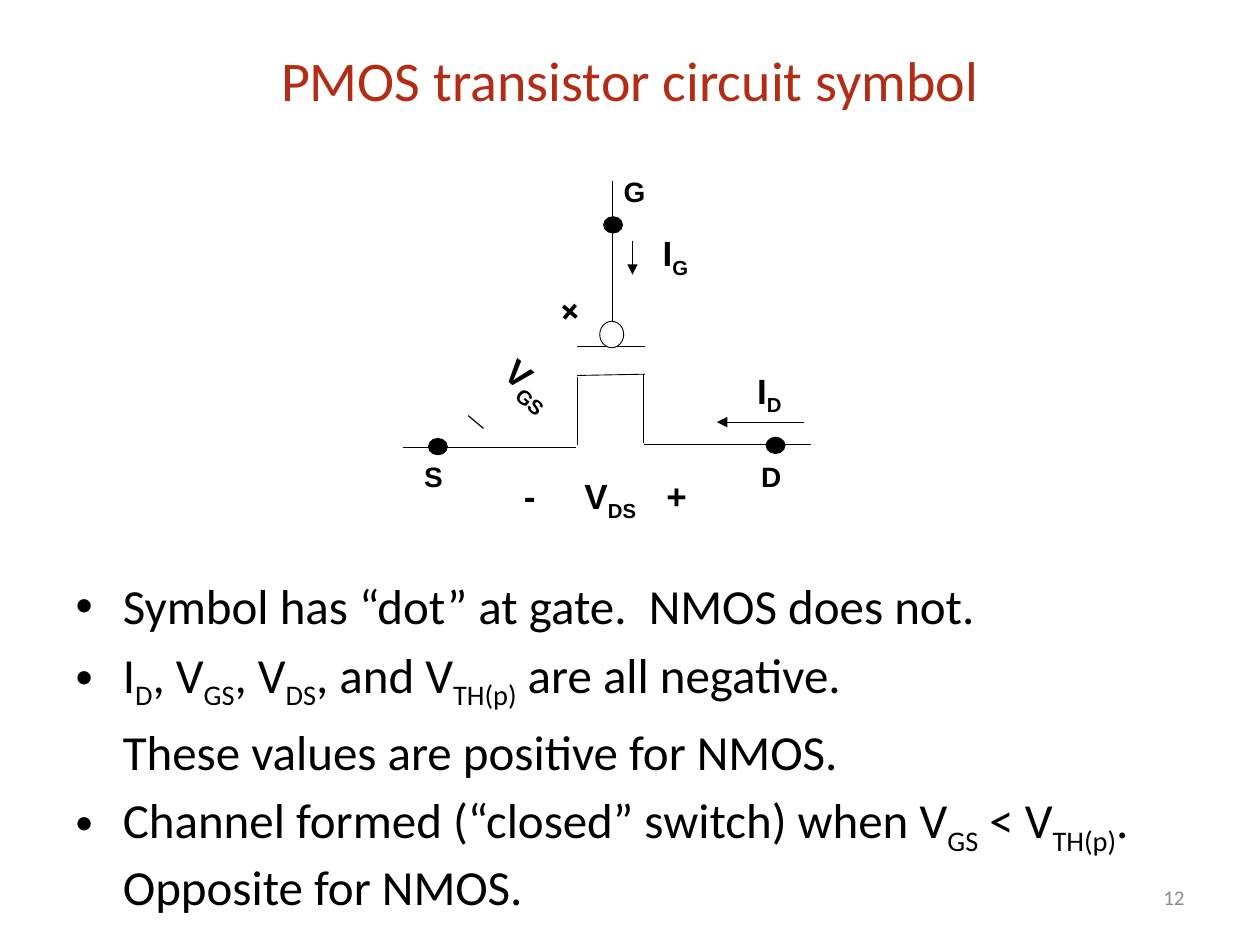
from lxml.etree import SubElement
from pptx import Presentation
from pptx.dml.color import RGBColor
from pptx.enum.shapes import MSO_CONNECTOR, MSO_SHAPE
from pptx.enum.text import MSO_ANCHOR, MSO_AUTO_SIZE, PP_ALIGN
from pptx.oxml.ns import qn
from pptx.util import Pt

EMU_PER_PX = 9144  # 100 px to the inch
BLACK, WHITE, RED, GRAY = "000000", "FFFFFF", "B32C16", "8C8C8C"


def px(length):
    return length * EMU_PER_PX


def color(hex_string):
    return RGBColor.from_string(hex_string)


def place(shape, left, top, width, height):
    shape.left, shape.top = px(left), px(top)
    shape.width, shape.height = px(width), px(height)


def write(paragraph, text, size, font="Calibri", fill=BLACK, bold=False):
    """Fill a paragraph; every second part between bars is a subscript."""
    for index, part in enumerate(text.split("|")):
        if not part:
            continue
        run = paragraph.add_run()
        run.text = part
        run.font.size, run.font.name, run.font.bold = Pt(size), font, bold
        run.font.color.rgb = color(fill)
        if index % 2:
            run.font._element.set("baseline", "-25000")


def add_wire(slide, start, end, arrow=False):
    wire = slide.shapes.add_connector(
        MSO_CONNECTOR.STRAIGHT, *(px(value) for value in start + end))
    wire.line.color.rgb = color(BLACK)
    wire.line.width = Pt(0.5)
    if arrow:
        SubElement(wire.line._get_or_add_ln(), qn("a:tailEnd"), type="triangle")
    SubElement(wire._element.spPr, qn("a:effectLst"))


def add_circle(slide, box, fill, rotation=0):
    circle = slide.shapes.add_shape(MSO_SHAPE.OVAL, *(px(value) for value in box))
    circle.shadow.inherit = False
    circle.rotation = rotation
    circle.fill.solid()
    circle.fill.fore_color.rgb = color(fill)
    circle.line.color.rgb = color(BLACK)
    circle.line.width = Pt(0.5)


def add_label(slide, box, lines, size=20, align=PP_ALIGN.LEFT, rotation=0, **style):
    label = slide.shapes.add_textbox(*(px(value) for value in box))
    label.rotation = rotation
    frame = label.text_frame
    frame.word_wrap = False
    for index, line in enumerate(lines):
        paragraph = frame.add_paragraph() if index else frame.paragraphs[0]
        paragraph.alignment = align
        write(paragraph, line, size, **style)
    return label


def add_symbol(slide):
    wires = [
        ((512, 275), (458, 275)), ((512, 297), (458, 298)),
        ((511, 297), (511, 352)), ((486, 275), (486, 144)),
        ((511, 353), (644, 353)), ((320, 355), (457, 355)),
        ((458, 299), (458, 353)),
    ]
    for start, end in wires:
        add_wire(slide, start, end)
    add_wire(slide, (638, 335), (569, 335), arrow=True)
    add_wire(slide, (502, 191), (502, 218), arrow=True)

    for left, top in ((480, 171), (341, 347), (609, 346)):
        add_circle(slide, (left, top, 13, 15), BLACK, rotation=90)
    add_circle(slide, (476, 255, 19, 21), WHITE)

    bold = {"font": "Arial", "bold": True}
    for text, box in (("G", (421, 134, 165, 37)), ("D", (570, 360, 84, 37)),
                      ("S", (302, 360, 84, 37))):
        add_label(slide, box, [text], 16, PP_ALIGN.CENTER, **bold)
    for text, left, top, width in (("I|D", 591, 288, 41), ("I|G", 516, 179, 42),
                                   ("-", 406, 372, 29), ("V|DS", 454, 372, 62),
                                   ("+", 519, 372, 36)):
        add_label(slide, (left, top, width, 43), [text], **bold)
    gate_source = add_label(slide, (400, 222, 65, 143), ["+", "V|GS", "_"],
                            rotation=40.2, **bold)
    gate_source.text_frame.paragraphs[1].space_before = Pt(23)


def fill_title(title):
    place(title, 50, 0, 900, 125)
    title.text_frame.vertical_anchor = MSO_ANCHOR.MIDDLE
    write(title.text_frame.paragraphs[0], "PMOS transistor circuit symbol", 32, fill=RED)


def fill_body(body):
    place(body, 50, 452, 892, 298)
    frame = body.text_frame
    frame.auto_size = MSO_AUTO_SIZE.NONE
    lines = [
        ("Symbol has “dot” at gate.  NMOS does not.", True),
        ("I|D|, V|GS|, V|DS|, and V|TH(p)| are all negative.", True),
        ("These values are positive for NMOS.", False),
        ("Channel formed (“closed” switch) when V|GS| < V|TH(p)|. Opposite for NMOS.", True),
    ]
    for index, (text, bulleted) in enumerate(lines):
        paragraph = frame.add_paragraph() if index else frame.paragraphs[0]
        write(paragraph, text, 28)
        if not bulleted:
            properties = paragraph._p.get_or_add_pPr()
            properties.set("indent", "0")
            SubElement(properties, qn("a:buNone"))


def main():
    presentation = Presentation()
    presentation.slide_width, presentation.slide_height = px(1000), px(750)
    slide = presentation.slides.add_slide(presentation.slide_layouts[1])
    add_symbol(slide)
    fill_title(slide.shapes.title)
    fill_body(slide.placeholders[1])
    number = add_label(slide, (717, 692, 233, 40), ["12"], 12, PP_ALIGN.RIGHT, fill=GRAY)
    number.text_frame.word_wrap = True
    number.text_frame.vertical_anchor = MSO_ANCHOR.MIDDLE
    presentation.save("out.pptx")


if __name__ == "__main__":
    main()
